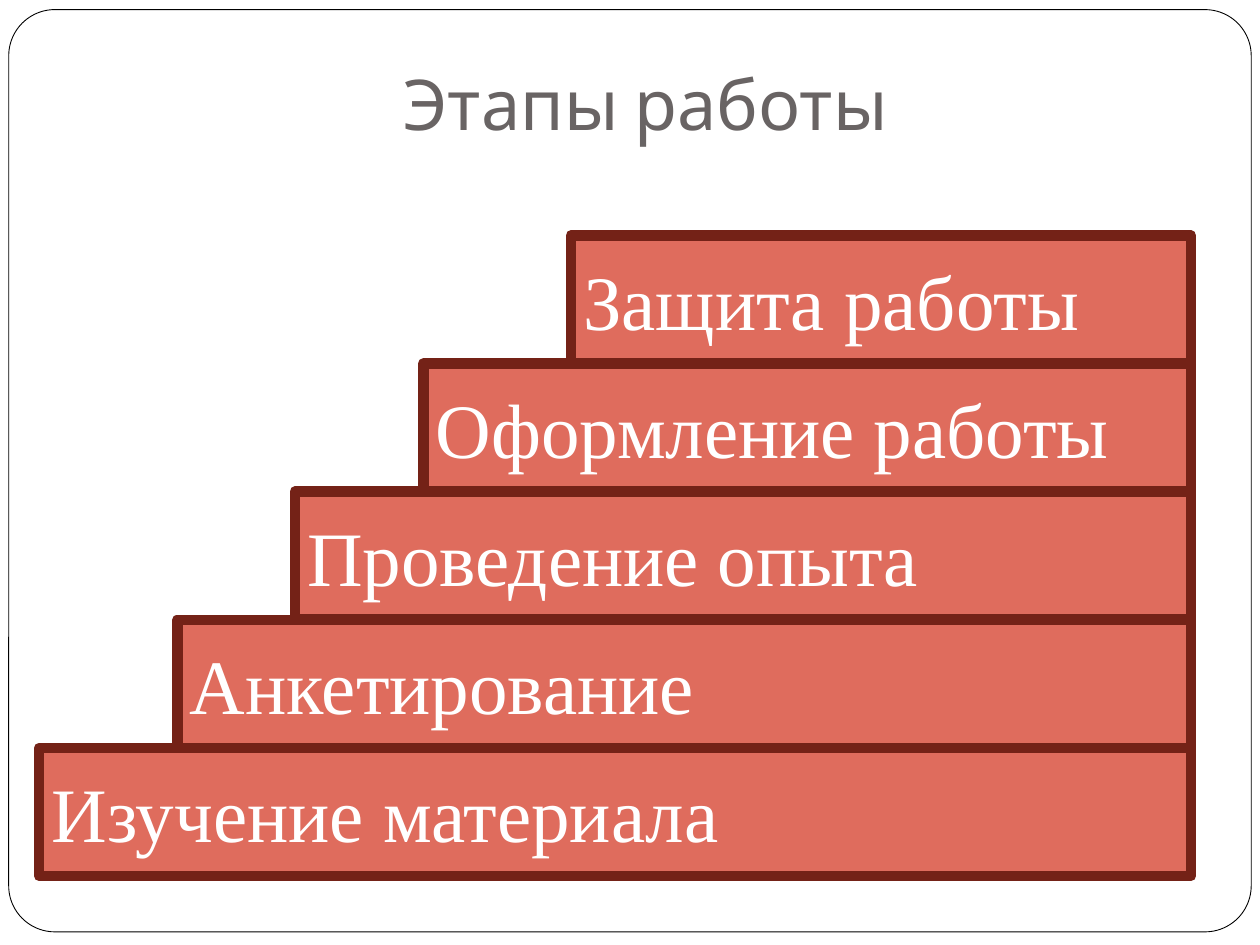
from dataclasses import dataclass

from pptx import Presentation
from pptx import util as u
from pptx.dml.color import RGBColor
from pptx.enum import shapes, text

RIGHT_EDGE = 680.6
FIRST_TOP = 134.6
STEP_HEIGHT = 73.2


@dataclass
class Step:
    """One stair, from its left edge to the common right edge."""
    label: str
    left: float


STEPS = [
    Step("Защита работы", 326.2),
    Step("Оформление работы", 241.9),
    Step("Проведение опыта", 168.5),
    Step("Анкетирование", 101.3),
    Step("Изучение материала", 22.3),
]


def color(value: str) -> RGBColor:
    """Turn a hex string into a colour."""
    return RGBColor.from_string(value)


def write(shape, content: str, *, font: str, size: float, fill: str,
          align, anchor, bottom: float = 3.6) -> None:
    """Put one formatted paragraph into a shape."""
    frame = shape.text_frame
    frame.word_wrap = True
    frame.auto_size = text.MSO_AUTO_SIZE.NONE
    frame.vertical_anchor = anchor
    frame.margin_left = frame.margin_right = u.Pt(7.2)
    frame.margin_top, frame.margin_bottom = u.Pt(3.6), u.Pt(bottom)
    paragraph = frame.paragraphs[0]
    paragraph.alignment = align
    run = paragraph.add_run()
    run.text = content
    run.font.name = font
    run.font.size = u.Pt(size)
    run.font.color.rgb = color(fill)


def add_box(slide, kind, left: float, top: float, width: float, height: float,
            fill: str, line: str, weight: float):
    """Add a filled and outlined preset shape."""
    shape = slide.shapes.add_shape(
        kind, u.Pt(left), u.Pt(top), u.Pt(width), u.Pt(height))
    shape.shadow.inherit = False
    shape.fill.solid()
    shape.fill.fore_color.rgb = color(fill)
    shape.line.color.rgb = color(line)
    shape.line.width = u.Pt(weight)
    return shape


def add_title(slide, content: str):
    """Place and format the title placeholder."""
    title = slide.shapes.title
    title.left, title.top = u.Pt(67.5), u.Pt(0)
    title.width, title.height = u.Pt(612), u.Pt(90)
    write(title, content, font="Cabin", size=40, fill="696464",
          align=text.PP_ALIGN.CENTER, anchor=text.MSO_ANCHOR.BOTTOM, bottom=7.2)
    return title


def add_step(slide, step: Step, index: int) -> None:
    """Draw one stair with its label."""
    box = add_box(slide, shapes.MSO_SHAPE.RECTANGLE, step.left,
                  FIRST_TOP + index * STEP_HEIGHT, RIGHT_EDGE - step.left,
                  STEP_HEIGHT, "DF6C5D", "742217", 6)
    write(box, step.label, font="Times New Roman", size=44, fill="FFFFFF",
          align=text.PP_ALIGN.LEFT, anchor=text.MSO_ANCHOR.MIDDLE)


def main() -> None:
    """Build and save the slide."""
    presentation = Presentation()
    presentation.slide_width, presentation.slide_height = u.Pt(720), u.Pt(540)
    slide = presentation.slides.add_slide(presentation.slide_layouts[5])
    title = add_title(slide, "Этапы работы ")
    border = add_box(slide, shapes.MSO_SHAPE.ROUNDED_RECTANGLE,
                     5, 5.5, 710, 527, "FFFFFF", "000000", 0.5)
    border.adjustments[0] = 0.05
    title.element.addprevious(border.element)
    for index, step in enumerate(STEPS):
        add_step(slide, step, index)
    presentation.save("out.pptx")


if __name__ == "__main__":
    main()
